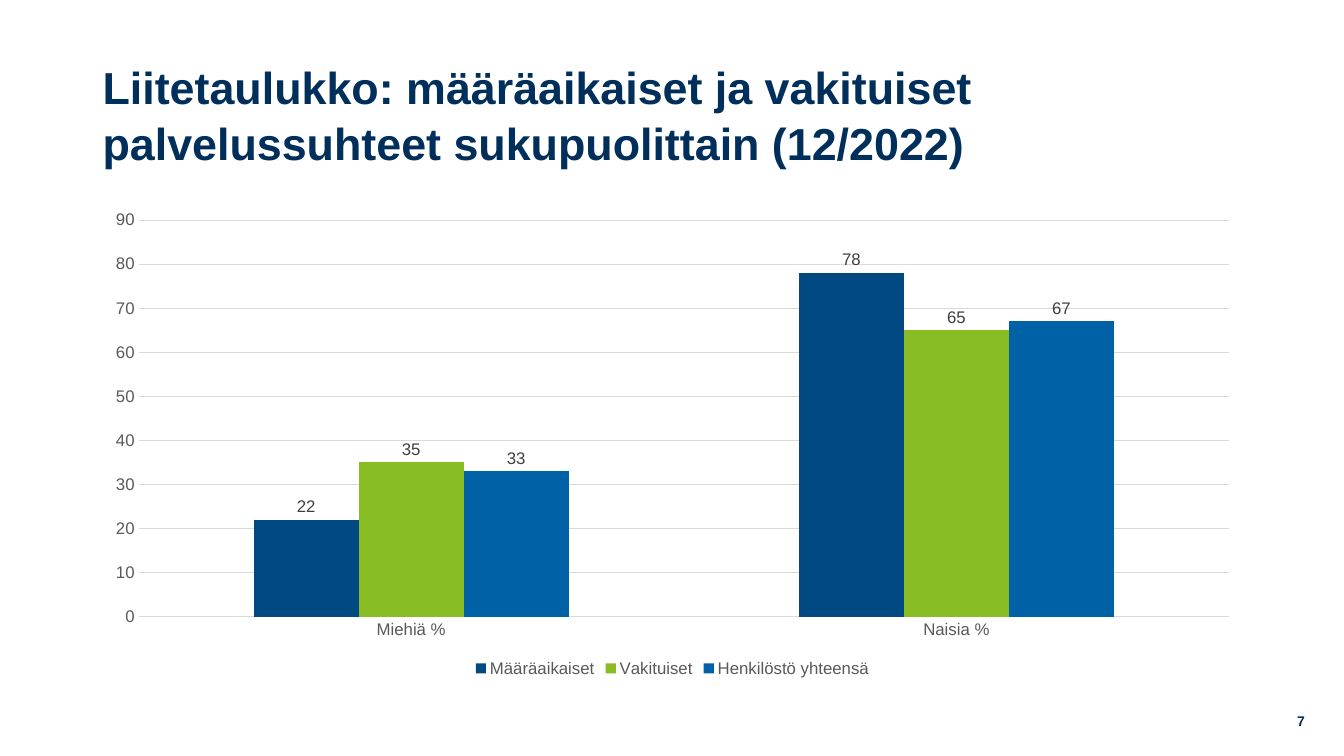
from pptx import Presentation
from pptx.chart.data import CategoryChartData
from pptx.dml.color import RGBColor
from pptx.enum.chart import XL_CHART_TYPE as ChartType, XL_LABEL_POSITION as LabelPosition
from pptx.enum.chart import XL_LEGEND_POSITION as LegendPosition, XL_TICK_MARK as TickMark
from pptx.enum.text import MSO_ANCHOR as Anchor, PP_ALIGN as Align
from pptx.util import Inches, Pt

NAVY, GREY, LABEL_GREY, GRID = "002F5B", "595959", "404040", "D9D9D9"
CATEGORIES = ["Miehiä %", "Naisia %"]
SERIES = [
    ("Määräaikaiset", [22, 78], "004982"),
    ("Vakituiset", [35, 65], "89BD24"),
    ("Henkilöstö yhteensä", [33, 67], "0061A7"),
]


def color(value):
    return RGBColor.from_string(value)


def set_font(font, size, value, bold=False):
    font.name = "Arial"
    font.size = Pt(size)
    font.bold = bold
    font.color.rgb = color(value)


def set_line(line):
    line.color.rgb = color(GRID)
    line.width = Pt(0.75)


def add_text(page, text, left, top, width, height, size, align=Align.LEFT, spacing=1.0):
    box = page.shapes.add_textbox(Inches(left), Inches(top), Inches(width), Inches(height))
    frame = box.text_frame
    frame.word_wrap = True
    frame.vertical_anchor = Anchor.MIDDLE
    para = frame.paragraphs[0]
    para.text = text
    para.alignment = align
    para.line_spacing = spacing
    set_font(para.font, size, NAVY, bold=True)


def style_axis(axis):
    axis.major_tick_mark = TickMark.NONE
    axis.minor_tick_mark = TickMark.NONE
    set_font(axis.tick_labels.font, 12, GREY)


def style_series(series, fill):
    series.format.fill.solid()
    series.format.fill.fore_color.rgb = color(fill)
    series.invert_if_negative = False
    labels = series.data_labels
    labels.show_value = True
    labels.position = LabelPosition.OUTSIDE_END
    set_font(labels.font, 12, LABEL_GREY)


def add_column_chart(page, left, top, width, height):
    data = CategoryChartData()
    data.categories = CATEGORIES
    for name, values, _ in SERIES:
        data.add_series(name, values)
    chart = page.shapes.add_chart(
        ChartType.COLUMN_CLUSTERED,
        Inches(left), Inches(top), Inches(width), Inches(height), data,
    ).chart
    set_font(chart.font, 10, "000000")
    chart.has_title = False

    style_axis(chart.category_axis)
    set_line(chart.category_axis.format.line)
    value_axis = chart.value_axis
    style_axis(value_axis)
    value_axis.minimum_scale, value_axis.maximum_scale, value_axis.major_unit = 0, 90, 10
    value_axis.format.line.fill.background()
    set_line(value_axis.major_gridlines.format.line)

    chart.has_legend = True
    chart.legend.position = LegendPosition.BOTTOM
    chart.legend.include_in_layout = False
    set_font(chart.legend.font, 12, GREY)

    plot = chart.plots[0]
    plot.gap_width = 219
    plot.overlap = 0
    plot.vary_by_categories = False
    for series, (_, _, fill) in zip(plot.series, SERIES):
        style_series(series, fill)


def main():
    deck = Presentation()
    deck.slide_width, deck.slide_height = Inches(13.33), Inches(7.5)
    page = deck.slides.add_slide(deck.slide_layouts[6])
    title = "Liitetaulukko: määräaikaiset ja vakituiset palvelussuhteet sukupuolittain (12/2022)"
    add_text(page, title, 0.92, 0.4, 10.64, 1.45, 32, spacing=1.05)
    add_column_chart(page, 0.92, 2, 11.5, 4.76)
    add_text(page, "7", 10.04, 6.95, 3, 0.4, 10, Align.RIGHT)
    deck.save("out.pptx")


if __name__ == "__main__":
    main()
